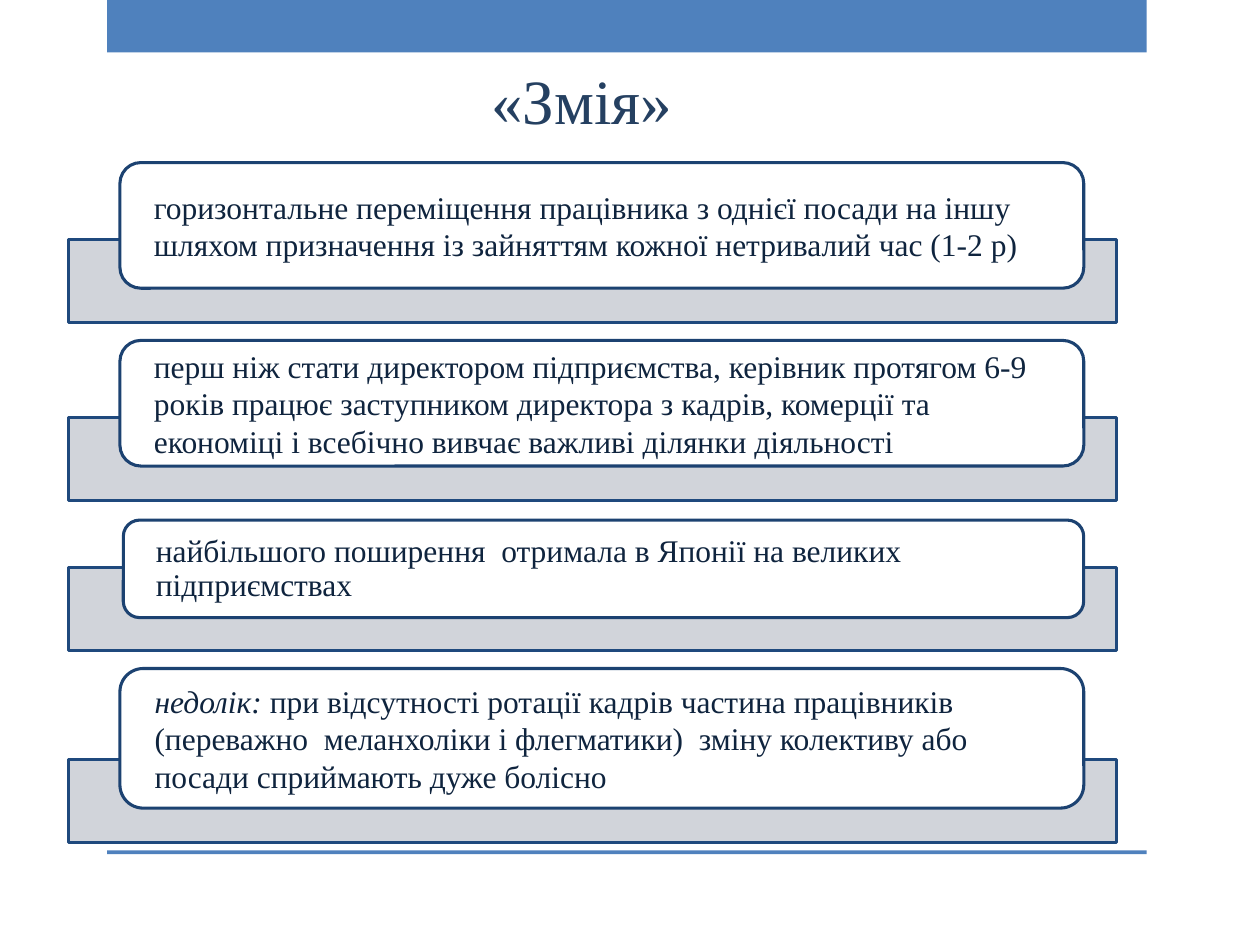
from dataclasses import dataclass

import pptx
import pptx.dml.color
import pptx.enum.shapes
import pptx.enum.text
import pptx.oxml
import pptx.oxml.ns
import pptx.util
from pptx.util import Pt

COLORS = {
    "accent": "4F81BD",
    "title": "254061",
    "band": "CDD0D7",
    "band_line": "1F497D",
    "card": "FFFFFF",
    "card_line": "1C4271",
    "text": "0F243E",
}
FONT = "Times New Roman"
LINE_WIDTH = 1.75
BAND_LEFT, BAND_WIDTH, BAND_HEIGHT = 38.9, 599.1, 47.5
CARD_RIGHT = 619.3
SHAPES = pptx.enum.shapes.MSO_SHAPE


@dataclass
class Item:
    band_top: float
    card_left: float
    card_top: float
    card_height: float
    text: str
    lead: str = ""
    line_spacing: float = 1.0
    space_after: float = 0


ITEMS = [
    Item(136.8, 68.5, 92.9, 71.8,
         "горизонтальне переміщення працівника з однієї посади на іншу "
         "шляхом призначення із зайняттям кожної нетривалий час (1-2 р)"),
    Item(238.4, 68.5, 194.5, 71.8,
         "перш ніж стати директором підприємства, керівник протягом 6-9 "
         "років працює заступником директора з кадрів, комерції та "
         "економіці і всебічно вивчає важливі ділянки діяльності"),
    Item(324.2, 70.5, 297.2, 55.7,
         "найбільшого поширення  отримала в Японії на великих підприємствах",
         line_spacing=0.9, space_after=6.3),
    Item(433.9, 68.5, 382, 79.8,
         " при відсутності ротації кадрів частина працівників "
         "(переважно  меланхоліки і флегматики)  зміну колективу або "
         "посади сприймають дуже болісно",
         lead="недолік:"),
]


def color(name: str) -> pptx.dml.color.RGBColor:
    return pptx.dml.color.RGBColor.from_string(COLORS[name])


def add_box(slide, kind, left: float, top: float, width: float, height: float,
            fill: str, line: str = "", opacity: int = 100):
    shape = slide.shapes.add_shape(kind, Pt(left), Pt(top), Pt(width), Pt(height))
    shape.shadow.inherit = False
    shape.fill.solid()
    shape.fill.fore_color.rgb = color(fill)
    if opacity < 100:
        fill_color = shape._element.spPr.find(".//" + pptx.oxml.ns.qn("a:srgbClr"))
        fill_color.append(pptx.oxml.parse_xml(
            f'<a:alpha {pptx.oxml.ns.nsdecls("a")} val="{opacity * 1000}"/>'))
    if line:
        shape.line.color.rgb = color(line)
        shape.line.width = Pt(LINE_WIDTH)
    else:
        shape.line.fill.background()
    return shape


def add_text(paragraph, text: str, *, size: float, color_name: str,
             italic: bool = False) -> None:
    run = paragraph.add_run()
    run.text = text
    run.font.name = FONT
    run.font.size = Pt(size)
    run.font.italic = italic
    run.font.color.rgb = color(color_name)


def add_item(slide, item: Item) -> None:
    # Grey band behind the card
    add_box(slide, SHAPES.RECTANGLE, BAND_LEFT, item.band_top, BAND_WIDTH,
            BAND_HEIGHT, "band", "band_line", opacity=90)
    # Rounded card with its text
    card = add_box(slide, SHAPES.ROUNDED_RECTANGLE, item.card_left, item.card_top,
                   CARD_RIGHT - item.card_left, item.card_height,
                   "card", "card_line")
    frame = card.text_frame
    frame.word_wrap = True
    frame.vertical_anchor = pptx.enum.text.MSO_ANCHOR.MIDDLE
    frame.margin_left = frame.margin_right = Pt(15.9)
    frame.margin_top = frame.margin_bottom = 0
    paragraph = frame.paragraphs[0]
    paragraph.alignment = pptx.enum.text.PP_ALIGN.LEFT
    paragraph.line_spacing = item.line_spacing
    paragraph.space_after = Pt(item.space_after)
    if item.lead:
        add_text(paragraph, item.lead, size=18, color_name="text", italic=True)
    add_text(paragraph, item.text, size=18, color_name="text")


def main() -> None:
    presentation = pptx.Presentation()
    presentation.slide_width, presentation.slide_height = Pt(720), Pt(540)
    slide = presentation.slides.add_slide(presentation.slide_layouts[6])

    # Top bar and bottom rule
    for top, height in ((0, 30), (485.9, 2.2)):
        add_box(slide, SHAPES.RECTANGLE, 61.2, top, 594, height, "accent")

    # Title
    title = slide.shapes.add_textbox(Pt(273.6), Pt(31.7), Pt(128.2), Pt(51))
    title.text_frame.word_wrap = False
    title.text_frame.auto_size = pptx.enum.text.MSO_AUTO_SIZE.SHAPE_TO_FIT_TEXT
    add_text(title.text_frame.paragraphs[0], "«Змія»", size=36, color_name="title")

    # Banded cards
    for item in ITEMS:
        add_item(slide, item)

    presentation.save("out.pptx")


if __name__ == "__main__":
    main()
